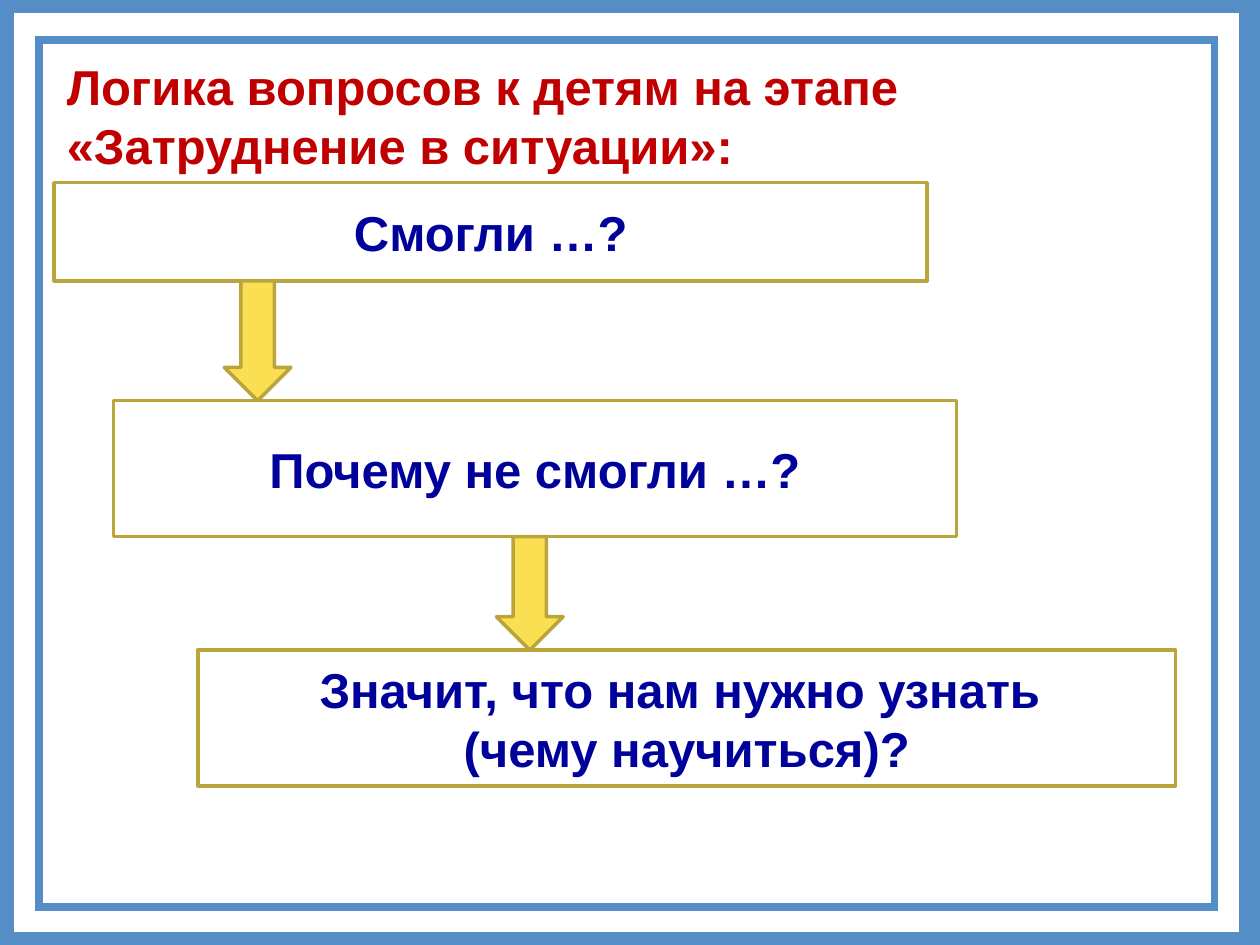
from lxml.etree import SubElement
from pptx import Presentation
from pptx.dml.color import RGBColor
from pptx.enum.shapes import MSO_SHAPE as Shape
from pptx.enum.text import MSO_ANCHOR as Anchor, MSO_AUTO_SIZE as AutoSize, PP_ALIGN as Align
from pptx.oxml.ns import qn
from pptx.util import Inches, Pt

RED = RGBColor(0xC0, 0x00, 0x00)
NAVY = RGBColor(0x00, 0x00, 0x9A)
WHITE = RGBColor(0xFF, 0xFF, 0xFF)
GOLD = RGBColor(0xBA, 0xA5, 0x3D)
YELLOW = RGBColor(0xFB, 0xDF, 0x53)
BLUE = RGBColor(0x55, 0x8E, 0xC7)

TITLE = "Логика вопросов к детям на этапе «Затруднение в ситуации»:"
# left, top, width, height, lines
QUESTIONS = [
    (0.43, 1.45, 6.93, 0.78, ["Смогли …?"]),
    (0.9, 3.18, 6.69, 1.08, ["Почему не смогли …?"]),
    (1.57, 5.16, 7.76, 1.08, ["Значит, что нам нужно узнать ", "(чему научиться)?"]),
]
ARROW_LEFTS = [1.78, 3.94]
ARROW_WIDTH = 0.53


def write_text(tf, lines, *, color, size=28, align=Align.LEFT, anchor=Anchor.TOP):
    tf.word_wrap = True
    tf.vertical_anchor = anchor
    for i, line in enumerate(lines):
        p = tf.paragraphs[0] if i == 0 else tf.add_paragraph()
        p.alignment = align
        r = p.add_run()
        r.text = line
        r.font.name = "Arial"
        r.font.size = Pt(size)
        r.font.bold = True
        r.font.color.rgb = color


def add_title(s, text):
    sp = s.shapes.title
    sp.left, sp.top, sp.width, sp.height = map(Inches, (0.43, 0.4, 9.06, 1.04))
    write_text(sp.text_frame, [text], color=RED)
    sp.text_frame.auto_size = AutoSize.NONE


def add_outlined(s, kind, box, *, line, width, fill=None):
    sp = s.shapes.add_shape(kind, *map(Inches, box))
    sp.shadow.inherit = False
    if fill is None:
        sp.fill.background()
    else:
        sp.fill.solid()
        sp.fill.fore_color.rgb = fill
    sp.line.color.rgb = line
    sp.line.width = Pt(width)
    return sp


def add_question(s, box, lines):
    sp = add_outlined(s, Shape.RECTANGLE, box, line=GOLD, width=2, fill=WHITE)
    write_text(sp.text_frame, lines, color=NAVY, align=Align.CENTER, anchor=Anchor.MIDDLE)


def add_arrow(s, left, top, bottom):
    box = (left, top, ARROW_WIDTH, bottom - top)
    add_outlined(s, Shape.DOWN_ARROW, box, line=GOLD, width=2, fill=YELLOW)


def add_frame(s, box, width):
    """Add an unfilled border with square corners."""
    sp = add_outlined(s, Shape.RECTANGLE, box, line=BLUE, width=width)
    SubElement(sp.line._get_or_add_ln(), qn("a:miter"), lim="800000")


def main():
    prs = Presentation()
    prs.slide_width, prs.slide_height = Inches(10), Inches(7.5)
    s = prs.slides.add_slide(prs.slide_layouts[5])
    add_title(s, TITLE)
    for *box, lines in QUESTIONS:
        add_question(s, box, lines)
    for left, upper, lower in zip(ARROW_LEFTS, QUESTIONS, QUESTIONS[1:]):
        add_arrow(s, left, upper[1] + upper[3], lower[1])
    add_frame(s, (0.01, 0, 9.93, 7.5), 15)
    add_frame(s, (0.31, 0.32, 9.33, 6.88), 4.5)
    prs.save("out.pptx")


if __name__ == "__main__":
    main()
